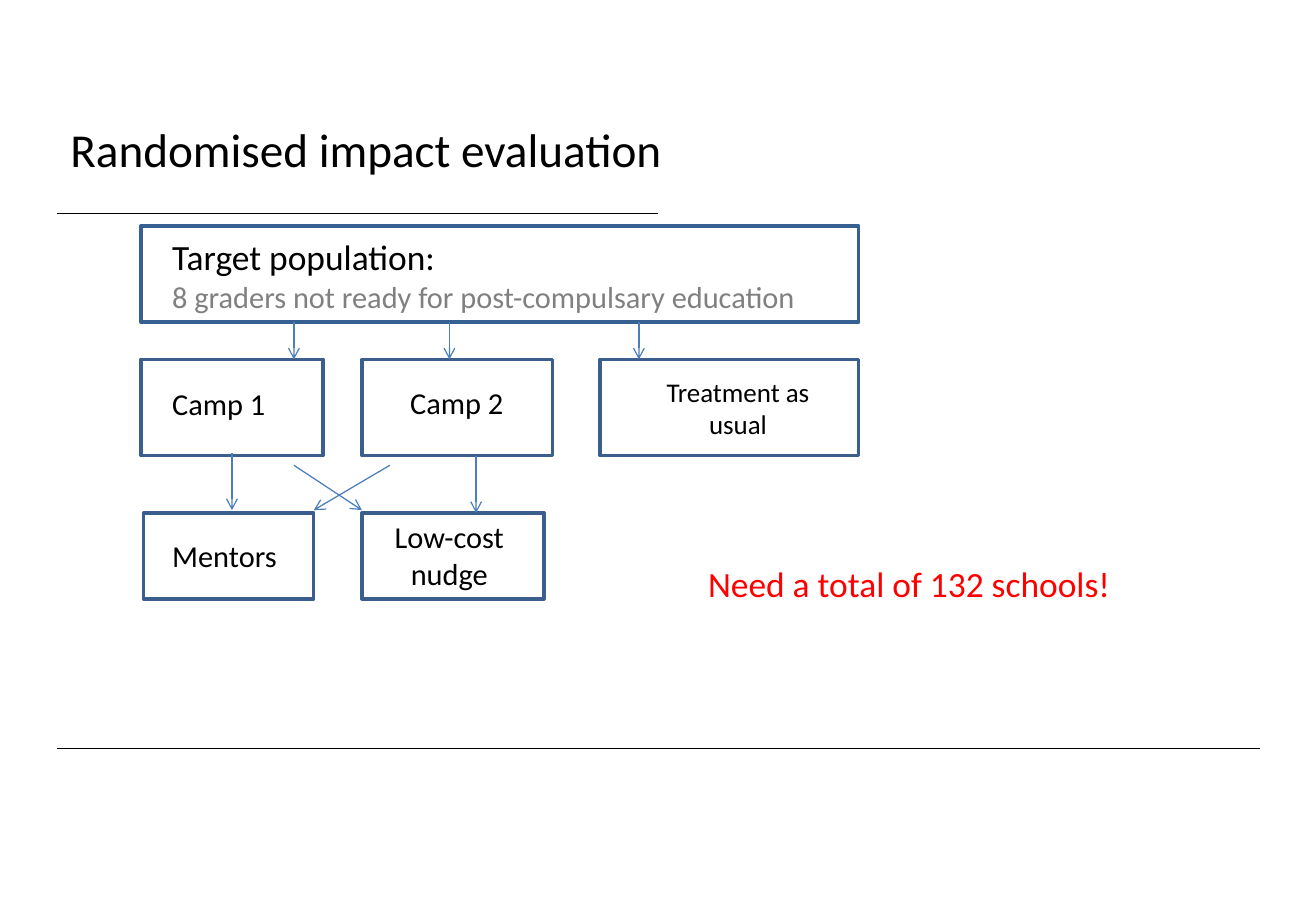
from typing import NamedTuple

from lxml.etree import SubElement
from pptx import Presentation
from pptx.dml.color import RGBColor
from pptx.enum.shapes import MSO_CONNECTOR, MSO_SHAPE
from pptx.enum.text import PP_ALIGN
from pptx.oxml.ns import qn
from pptx.shapes.connector import Connector
from pptx.slide import Slide
from pptx.util import Pt

COLORS = {
    "black": "000000",
    "white": "FFFFFF",
    "gray": "808080",
    "red": "FF0000",
    "population": "376092",
    "group": "3A5F8C",
    "arrow": "4B7EBC",
}
FONT = "Calibri"


class Line(NamedTuple):
    text: str
    size: float
    color: str = "black"


class Label(NamedTuple):
    left: float
    top: float
    width: float
    height: float
    lines: list[Line]
    align: PP_ALIGN = PP_ALIGN.LEFT
    margin_x: float = 7.2
    margin_y: float = 3.6


class Box(NamedTuple):
    left: float
    top: float
    width: float
    height: float
    border: str = "group"


class Segment(NamedTuple):
    x1: float
    y1: float
    x2: float
    y2: float


POPULATION_TOP, POPULATION_HEIGHT = 134, 57
GROUP_TOP, GROUP_HEIGHT = 213, 57
FOLLOW_UP_TOP, FOLLOW_UP_HEIGHT = 304, 51
POPULATION_BOTTOM = POPULATION_TOP + POPULATION_HEIGHT
GROUP_BOTTOM = GROUP_TOP + GROUP_HEIGHT
CROSSING_TOP, CROSSING_BOTTOM = 275.8, 302.4

RULES = [Segment(33.8, 443.5, 746.6, 443.5), Segment(33.8, 126.7, 390.2, 126.7)]

BOXES = [
    Box(83.5, POPULATION_TOP, 425.5, POPULATION_HEIGHT, "population"),
    Box(83.5, GROUP_TOP, 108, GROUP_HEIGHT),
    Box(214.5, GROUP_TOP, 113, GROUP_HEIGHT),
    Box(355.7, GROUP_TOP, 153.3, GROUP_HEIGHT),
    Box(85, FOLLOW_UP_TOP, 101, FOLLOW_UP_HEIGHT),
    Box(214.5, FOLLOW_UP_TOP, 108, FOLLOW_UP_HEIGHT),
]

LABELS = [
    Label(33.1, 65.5, 623.5, 68.4, [Line("Randomised impact evaluation", 28)],
          margin_x=8.6, margin_y=6),
    Label(95, 136.1, 402.5, 54.7, [
        Line("Target population:", 21),
        Line("8 graders not ready for post-compulsary education", 18, "gray"),
    ]),
    Label(95, 224.6, 90.7, 29, [Line("Camp 1", 18)]),
    Label(219.6, 223.9, 102.2, 29, [Line("Camp 2", 18)], PP_ALIGN.CENTER),
    Label(369.4, 218.9, 136, 46, [Line("Treatment as usual", 16)], PP_ALIGN.CENTER),
    Label(221, 303.8, 90.7, 51, [Line("Low-cost nudge", 18)], PP_ALIGN.CENTER),
    Label(95, 314.6, 79.2, 29, [Line("Mentors", 18)]),
    Label(412.6, 329.8, 283.7, 32.4, [Line("Need a total of 132 schools!", 21, "red")]),
]

ARROWS = [
    *(Segment(x, POPULATION_BOTTOM, x, GROUP_TOP) for x in (174.2, 266.4, 378.7)),
    Segment(137.5, 268.6, 137.5, CROSSING_BOTTOM),
    Segment(282.2, GROUP_BOTTOM, 282.2, FOLLOW_UP_TOP),
    Segment(174.2, CROSSING_TOP, 214.5, CROSSING_BOTTOM),
    Segment(231.1, CROSSING_TOP, 186, CROSSING_BOTTOM),
]


def rgb(name: str) -> RGBColor:
    return RGBColor.from_string(COLORS[name])


def draw_segment(slide: Slide, segment: Segment, color: str, width: float) -> Connector:
    connector = slide.shapes.add_connector(
        MSO_CONNECTOR.STRAIGHT, *(Pt(length) for length in segment))
    connector.line.color.rgb = rgb(color)
    connector.line.width = Pt(width)
    SubElement(connector._element.spPr, qn("a:effectLst"))
    return connector


def draw_arrow(slide: Slide, segment: Segment) -> None:
    connector = draw_segment(slide, segment, "arrow", 0.75)
    SubElement(connector.line._get_or_add_ln(), qn("a:tailEnd"), type="arrow")


def draw_box(slide: Slide, box: Box) -> None:
    shape = slide.shapes.add_shape(
        MSO_SHAPE.RECTANGLE, Pt(box.left), Pt(box.top), Pt(box.width), Pt(box.height))
    shape.shadow.inherit = False
    shape.fill.solid()
    shape.fill.fore_color.rgb = rgb("white")
    shape.line.color.rgb = rgb(box.border)
    shape.line.width = Pt(2)


def draw_label(slide: Slide, label: Label) -> None:
    frame = slide.shapes.add_textbox(
        Pt(label.left), Pt(label.top), Pt(label.width), Pt(label.height)).text_frame
    frame.word_wrap = True
    frame.margin_left = frame.margin_right = Pt(label.margin_x)
    frame.margin_top = frame.margin_bottom = Pt(label.margin_y)
    frame.text = "\n".join(line.text for line in label.lines)
    for paragraph, line in zip(frame.paragraphs, label.lines):
        paragraph.alignment = label.align
        font = paragraph.runs[0].font
        font.name = FONT
        font.size = Pt(line.size)
        font.color.rgb = rgb(line.color)


def main() -> None:
    presentation = Presentation()
    presentation.slide_width = Pt(780)
    presentation.slide_height = Pt(540)
    slide = presentation.slides.add_slide(presentation.slide_layouts[6])
    for rule in RULES:
        draw_segment(slide, rule, "black", 0.25)
    for box in BOXES:
        draw_box(slide, box)
    for label in LABELS:
        draw_label(slide, label)
    for arrow in ARROWS:
        draw_arrow(slide, arrow)
    presentation.save("out.pptx")


if __name__ == "__main__":
    main()
